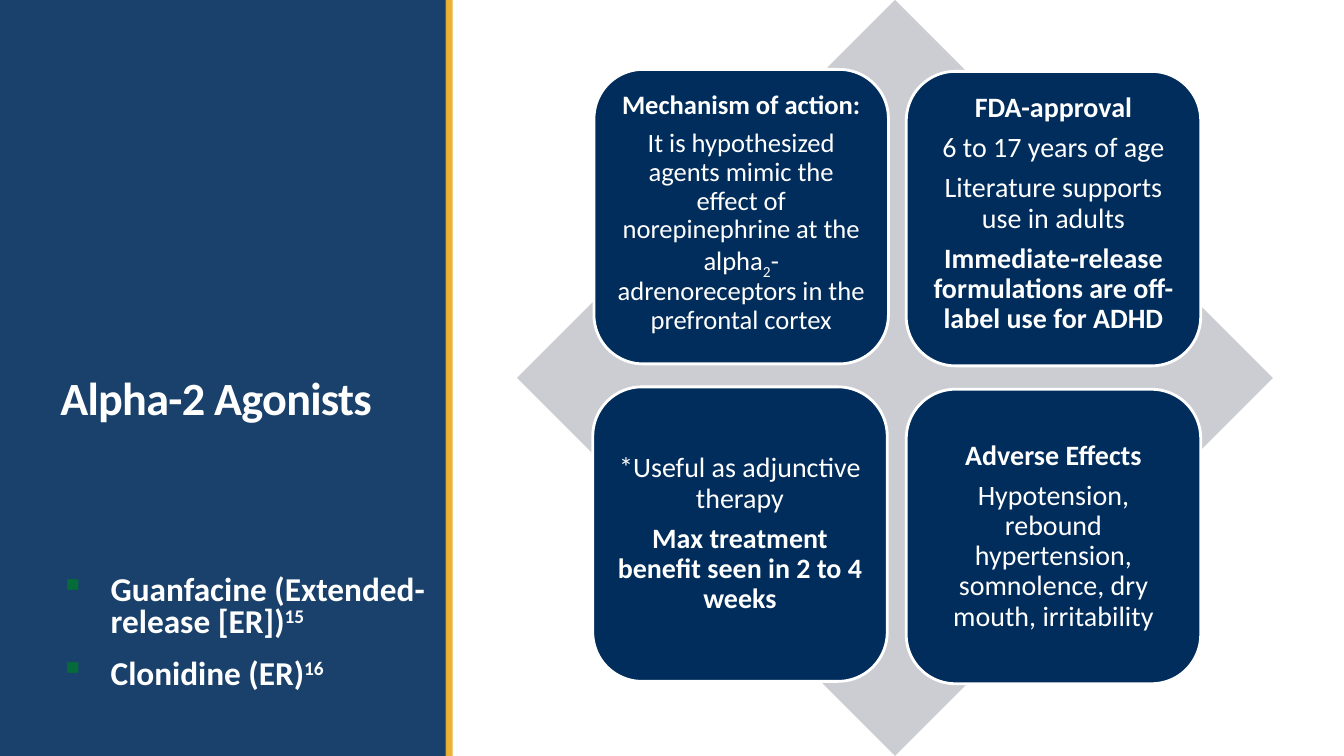
from lxml import etree
from pptx import Presentation
from pptx.dml.color import RGBColor
from pptx.enum.shapes import MSO_SHAPE
from pptx.enum.text import MSO_ANCHOR, PP_ALIGN
from pptx.oxml.ns import qn
from pptx.util import Cm, Pt

RECT, ROUND, DIAMOND = (
    MSO_SHAPE.RECTANGLE, MSO_SHAPE.ROUNDED_RECTANGLE, MSO_SHAPE.DIAMOND)
TOP, MIDDLE, BOTTOM = MSO_ANCHOR.TOP, MSO_ANCHOR.MIDDLE, MSO_ANCHOR.BOTTOM
LEFT, CENTER = PP_ALIGN.LEFT, PP_ALIGN.CENTER

NAVY = RGBColor(0x00, 0x2D, 0x5B)
GOLD = RGBColor(0xE9, 0xAA, 0x21)
GRAY = RGBColor(0xCC, 0xCD, 0xD2)
GREEN = RGBColor(0x05, 0x6B, 0x38)
WHITE = RGBColor(0xFF, 0xFF, 0xFF)

SIDE = 7.42
DRUGS = [("Guanfacine (Extended-release [ER])", "15"), ("Clonidine (ER)", "16")]
CARDS = [
    (14.94, 9.75, MIDDLE, 20, [
        [("*Useful as adjunctive therapy", False)],
        [("Max treatment benefit seen in 2 to 4 weeks", True)]]),
    (22.84, 1.8, TOP, 20, [
        [("FDA-approval", True)],
        [("6 to 17 years of age", False)],
        [("Literature supports use in adults", False)],
        [("Immediate-release formulations are off-label use for ADHD", True)]]),
    (14.97, 1.75, TOP, 19, [
        [("Mechanism of action:", True)],
        [("It is hypothesized agents mimic the effect of "
          "norepinephrine at the alpha", False),
         ("2", False, -25),
         ("-adrenoreceptors in the prefrontal cortex", False)]]),
    (22.84, 9.81, MIDDLE, 20, [
        [("Adverse Effects", True)],
        [("Hypotension, rebound hypertension, somnolence, dry mouth, "
          "irritability", False)]]),
]


def add_shape(slide, kind, box, color, alpha=None):
    """Add a plain filled shape, with an optional opacity in percent."""
    shape = slide.shapes.add_shape(kind, *map(Cm, box))
    shape.shadow.inherit = False
    shape.fill.solid()
    shape.fill.fore_color.rgb = color
    shape.line.fill.background()
    if alpha:
        tint = shape._element.spPr.find(".//" + qn("a:srgbClr"))
        etree.SubElement(tint, qn("a:alpha")).set("val", str(alpha * 1000))
    return shape


def set_frame(frame, anchor, inset=None):
    """Make a text frame wrap, and set its anchor and insets."""
    frame.word_wrap = True
    frame.vertical_anchor = anchor
    if inset is not None:
        frame.margin_left = frame.margin_right = Cm(inset)
        frame.margin_top = frame.margin_bottom = Cm(inset)


def next_para(frame, align, lines, after=0):
    """Return a fresh paragraph of the frame with its spacing set."""
    para = frame.paragraphs[0]
    if para.runs:
        para = frame.add_paragraph()
    para.alignment = align
    para.line_spacing = lines
    para.space_after = Pt(after)
    return para


def add_run(para, text, size, bold, shift=0):
    """Add a white run, raised or lowered by a percentage."""
    run = para.add_run()
    run.text = text
    font = run.font
    font.name, font.size, font.bold = "Calibri", Pt(size), bold
    font.color.rgb = WHITE
    if shift:
        run._r.get_or_add_rPr().set("baseline", str(shift * 1000))
    return run


def add_bullet(para, indent):
    """Give a paragraph a green square bullet and a hanging indent."""
    props = para._p.get_or_add_pPr()
    props.set("marL", str(Cm(indent)))
    props.set("indent", str(-Cm(indent)))
    color = etree.SubElement(props, qn("a:buClr"))
    etree.SubElement(color, qn("a:srgbClr")).set("val", str(GREEN))
    etree.SubElement(props, qn("a:buChar")).set("char", "▪")


def add_title(slide, text):
    """Add the heading of the side panel."""
    box = slide.shapes.add_textbox(Cm(1.27), Cm(6), Cm(8.89), Cm(6.35))
    set_frame(box.text_frame, BOTTOM)
    box.text_frame.margin_bottom = Cm(1.65)
    para = next_para(box.text_frame, LEFT, 0.85)
    run = add_run(para, text, 33, True)
    run._r.get_or_add_rPr().set("spc", "-50")


def add_drugs(slide, drugs):
    """Add the bulleted list of drugs with their reference numbers."""
    box = slide.shapes.add_textbox(Cm(1.27), Cm(14.4), Cm(9.98), Cm(3.45))
    set_frame(box.text_frame, TOP)
    for rank, (name, ref) in enumerate(drugs):
        para = next_para(box.text_frame, LEFT, 0.8, 2)
        add_bullet(para, 1.27)
        if rank:
            para.space_before = Pt(12)
        add_run(para, name, 23.8, True)
        add_run(para, ref, 23.8, True, 30)


def add_card(slide, left, top, anchor, size, paras):
    """Add a rounded card with centred paragraphs."""
    card = add_shape(slide, ROUND, (left, top, SIDE, SIDE), NAVY)
    card.line.color.rgb = WHITE
    card.line.width = Pt(2)
    set_frame(card.text_frame, anchor, 0.2)
    for runs in paras:
        para = next_para(card.text_frame, CENTER, 0.9, size * 0.35)
        for text, bold, *shift in runs:
            add_run(para, text, size, bold, *shift)


def main():
    """Build the slide and save it."""
    deck = Presentation()
    deck.slide_width, deck.slide_height = Cm(33.87), Cm(19.05)
    slide = deck.slides.add_slide(deck.slide_layouts[6])
    add_shape(slide, RECT, (0, 0, 11.25, 19.05), NAVY, 90)
    add_shape(slide, RECT, (11.23, 0, 0.18, 19.05), GOLD, 90)
    add_title(slide, "Alpha-2 Agonists")
    add_drugs(slide, DRUGS)
    add_shape(slide, DIAMOND, (13.03, 0, 19.05, 19.05), GRAY)
    for card in CARDS:
        add_card(slide, *card)
    deck.save("out.pptx")


if __name__ == "__main__":
    main()
